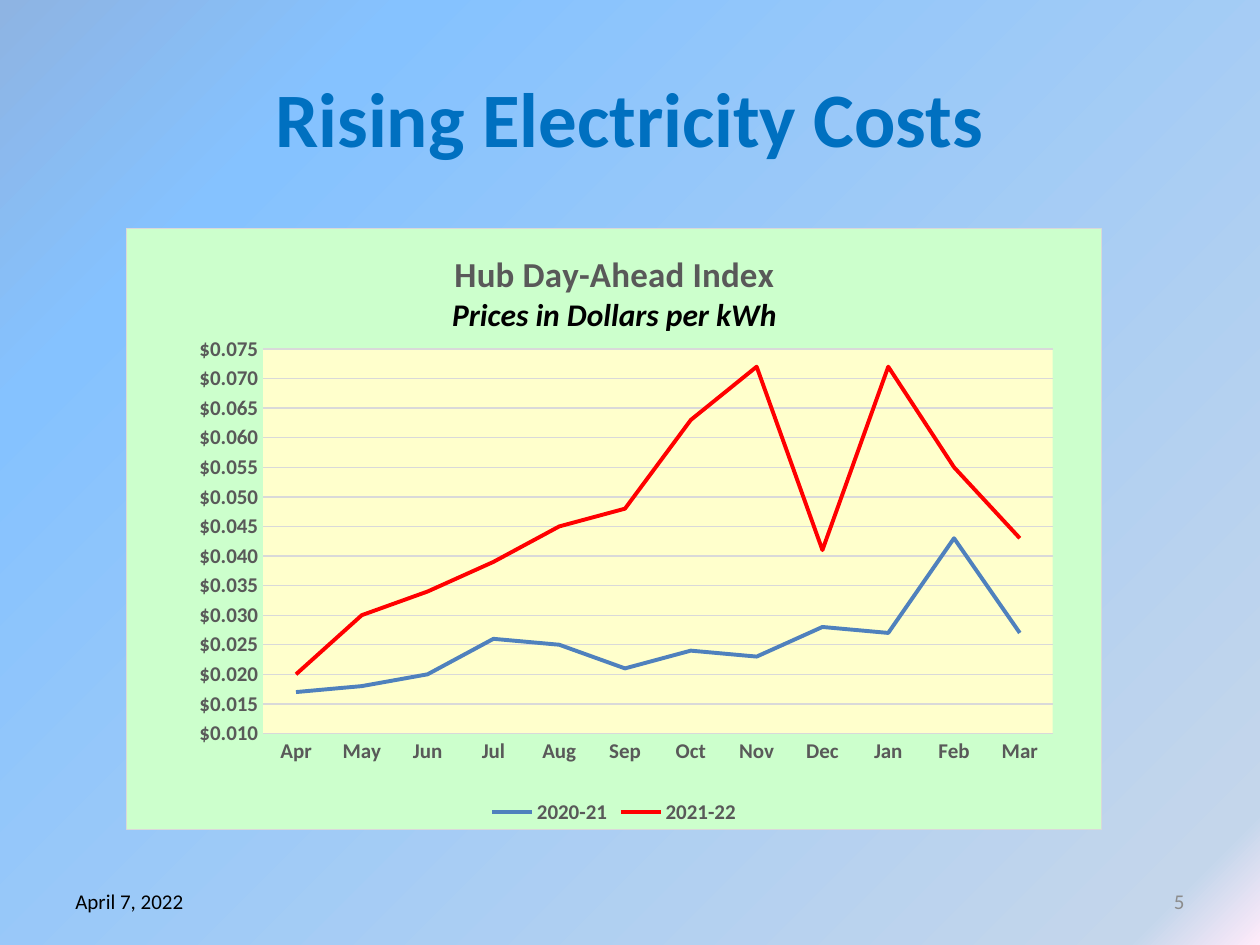
import pptx
import pptx.chart.data
import pptx.dml.color
import pptx.enum.chart
import pptx.enum.text
import pptx.oxml
import pptx.oxml.ns
import pptx.util
from dataclasses import dataclass

Cm, Pt = pptx.util.Cm, pptx.util.Pt
RGB = pptx.dml.color.RGBColor.from_string
qn, nsdecls = pptx.oxml.ns.qn, pptx.oxml.ns.nsdecls
ALIGN = pptx.enum.text.PP_ALIGN
XL = pptx.enum.chart


@dataclass(frozen=True)
class Theme:
    font: str = "Calibri"
    heading: str = "0070C0"
    text: str = "000000"
    muted: str = "8C8C8C"
    label: str = "595959"
    rule: str = "D9D9D9"
    chart_fill: str = "CCFFCC"
    plot_fill: str = "FFFFCC"
    last_year: str = "4F81BD"
    this_year: str = "FF0000"
    backdrop: tuple = ((0, "8EB4E3"), (19, "85C2FF"), (94, "C4D6EB"), (100, "FFEBFA"))
    heading_size: int = 44
    chart_title_size: int = 20
    subtitle_size: int = 18
    small_size: int = 12
    chart_size: int = 10


class SlideBuilder:
    def __init__(self, prs, theme):
        self.t = theme
        self.s = prs.slides.add_slide(prs.slide_layouts[6])

    def style(self, font, size, color, bold=False, italic=False):
        font.name, font.size = self.t.font, Pt(size)
        font.bold, font.italic = bold, italic
        font.color.rgb = RGB(color)

    def run(self, p, text, size, color, **style):
        r = p.add_run()
        r.text = text
        self.style(r.font, size, color, **style)

    def background(self, angle):
        self.s.background.fill.gradient()
        grad = self.s.element.find(".//" + qn("a:gradFill"))
        stops = "".join(
            f'<a:gs pos="{pos * 1000}"><a:srgbClr val="{color}"/></a:gs>'
            for pos, color in self.t.backdrop)
        for child in list(grad):
            grad.remove(child)
        grad.append(pptx.oxml.parse_xml(f'<a:gsLst {nsdecls("a")}>{stops}</a:gsLst>'))
        grad.append(pptx.oxml.parse_xml(
            f'<a:lin {nsdecls("a")} ang="{angle * 60000}" scaled="0"/>'))

    def text(self, box, text, size, color, align=ALIGN.LEFT, bold=False):
        tf = self.s.shapes.add_textbox(*map(Cm, box)).text_frame
        tf.word_wrap = True
        tf.vertical_anchor = pptx.enum.text.MSO_ANCHOR.MIDDLE
        p = tf.paragraphs[0]
        p.alignment = align
        self.run(p, text, size, color, bold=bold)

    def area(self, fill, border=None):
        line = (f'<a:ln w="9525"><a:solidFill><a:srgbClr val="{border}"/></a:solidFill></a:ln>'
                if border else "<a:ln><a:noFill/></a:ln>")
        return pptx.oxml.parse_xml(
            f'<c:spPr {nsdecls("c", "a")}><a:solidFill><a:srgbClr val="{fill}"/>'
            f"</a:solidFill>{line}</c:spPr>")

    def place(self, parent, index, target="", **fractions):
        old = parent.find(qn("c:layout"))
        if old is not None:
            parent.remove(old)
        inner = f'<c:layoutTarget val="{target}"/>' if target else ""
        inner += "".join(f'<c:{k}Mode val="edge"/>' for k in "xy")
        inner += "".join(f'<c:{k} val="{v}"/>' for k, v in fractions.items())
        parent.insert(index, pptx.oxml.parse_xml(
            f'<c:layout {nsdecls("c")}><c:manualLayout>{inner}</c:manualLayout></c:layout>'))

    def line_chart(self, box, title, subtitle, categories, series):
        t = self.t
        data = pptx.chart.data.CategoryChartData(number_format='"$"#,##0.000')
        data.categories = categories
        for name, _, values in series:
            data.add_series(name, values)
        chart = self.s.shapes.add_chart(
            XL.XL_CHART_TYPE.LINE, *map(Cm, box), data).chart
        self.style(chart.font, t.chart_size, t.text)

        # Series
        plot = chart.plots[0]
        plot.vary_by_categories = False
        for ser, (_, color, _) in zip(plot.series, series):
            ser.smooth = False
            ser.format.line.width = Pt(2.25)
            ser.format.line.color.rgb = RGB(color)

        # Title and legend
        tf = chart.chart_title.text_frame
        self.run(tf.paragraphs[0], title, t.chart_title_size, t.label, bold=True)
        self.run(tf.add_paragraph(), subtitle, t.subtitle_size, t.text,
                 bold=True, italic=True)
        chart.chart_title.include_in_layout = False
        self.place(chart.chart_title.element, 1, x=0.33, y=0.03)
        chart.has_legend = True
        chart.legend.position = XL.XL_LEGEND_POSITION.BOTTOM
        chart.legend.include_in_layout = False
        self.style(chart.legend.font, t.small_size, t.label, bold=True)

        # Axes
        cat, val = chart.category_axis, chart.value_axis
        for axis in (cat, val):
            axis.major_tick_mark = axis.minor_tick_mark = XL.XL_TICK_MARK.NONE
            self.style(axis.tick_labels.font, t.small_size, t.label, bold=True)
        val.minimum_scale, val.maximum_scale, val.major_unit = 0.01, 0.075, 0.005
        val.tick_labels.number_format = '"$"#,##0.000'
        val.tick_labels.number_format_is_linked = False
        val.format.line.fill.background()
        for line in (cat.format.line, val.major_gridlines.format.line):
            line.width = Pt(0.75)
            line.color.rgb = RGB(t.rule)

        # Chart and plot areas
        plot_area = chart.element.find(".//" + qn("c:plotArea"))
        self.place(plot_area, 0, "inner", x=0.14, y=0.2, w=0.81, h=0.64)
        plot_area.append(self.area(t.plot_fill))
        chart.element.find(qn("c:chart")).addnext(self.area(t.chart_fill, t.rule))


def main():
    prs = pptx.Presentation()
    prs.slide_width, prs.slide_height = Cm(25.4), Cm(19.05)
    t = Theme()
    b = SlideBuilder(prs, t)
    b.background(45)

    # Heading
    b.text((1.27, 0.76, 22.86, 3.18), "Rising Electricity Costs",
           t.heading_size, t.heading, ALIGN.CENTER, bold=True)

    # Price chart
    months = "Apr May Jun Jul Aug Sep Oct Nov Dec Jan Feb Mar".split()
    b.line_chart(
        (2.54, 4.6, 19.68, 12.14), "Hub Day-Ahead Index", "Prices in Dollars per kWh",
        months,
        [("2020-21", t.last_year, (0.017, 0.018, 0.02, 0.026, 0.025, 0.021,
                                   0.024, 0.023, 0.028, 0.027, 0.043, 0.027)),
         ("2021-22", t.this_year, (0.02, 0.03, 0.034, 0.039, 0.045, 0.048,
                                   0.063, 0.072, 0.041, 0.072, 0.055, 0.043))])

    # Footer
    b.text((18.21, 17.65, 5.92, 1.02), "5", t.small_size, t.muted, ALIGN.RIGHT)
    b.text((1.27, 17.65, 5.92, 1.02), "April 7, 2022", t.small_size, t.text)

    prs.save("out.pptx")


if __name__ == "__main__":
    main()
